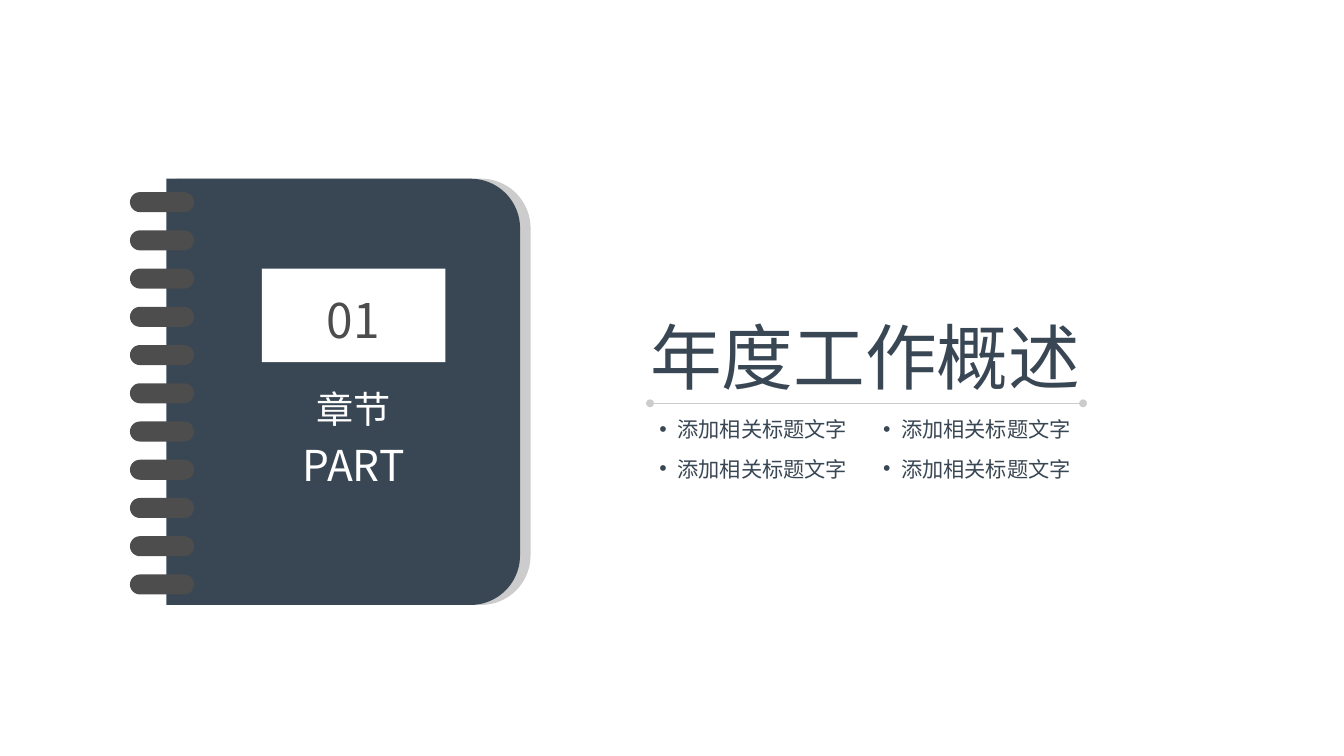
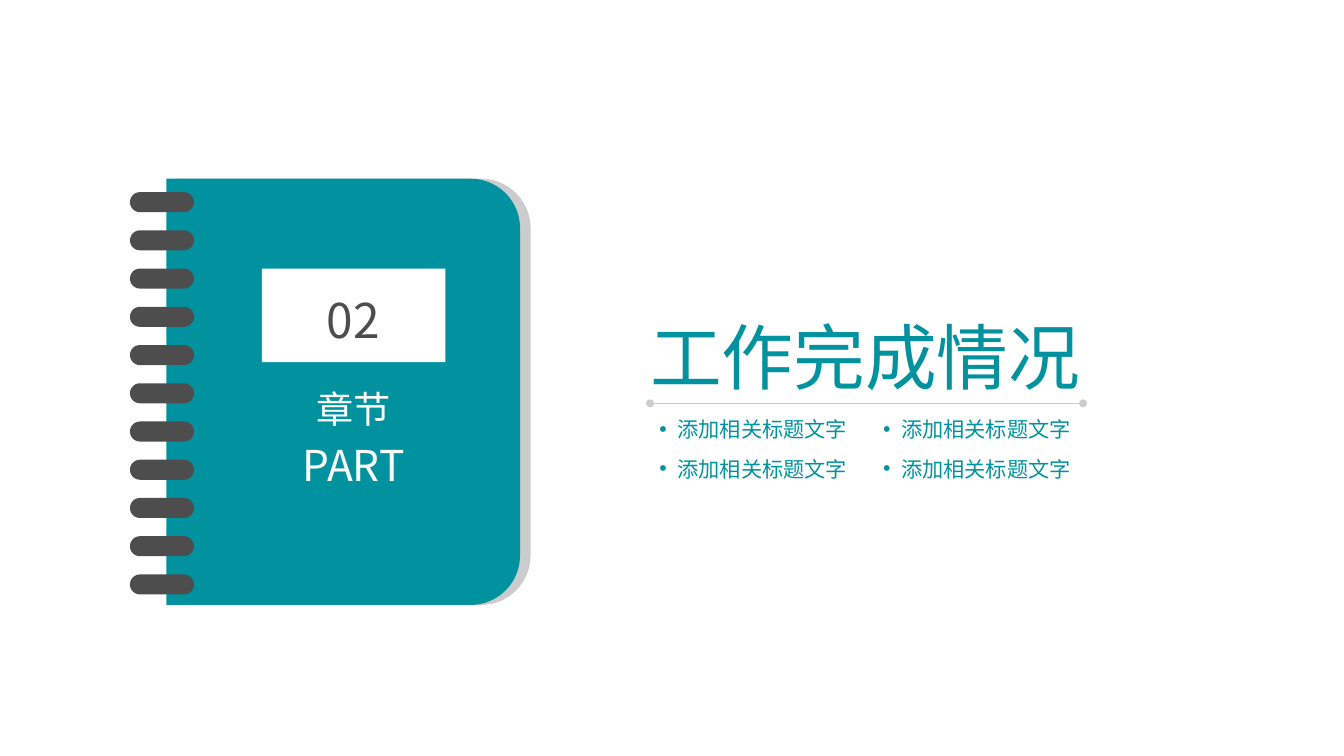
from pptx import Presentation
from pptx import util as u
from pptx.dml import color
from pptx.enum import shapes, text
from pptx.oxml import ns, xmlchemy

DARK, PALE, WHITE = "4D4D4D", "CCCCCC", "FFFFFF"
LATIN, CHINESE = "Arial", "Noto Sans CJK SC"
SHAPE = shapes.MSO_SHAPE
BULLET_TEXT = "添加相关标题文字"
CHAPTERS = [("01", "年度工作概述", "394754"), ("02", "工作完成情况", "00939F")]


def rgb(value):
    return color.RGBColor.from_string(value)


def add_xml(parent, tag, **attributes):
    element = xmlchemy.OxmlElement(tag)
    for name, value in attributes.items():
        element.set(name, str(value))
    parent.append(element)
    return element


def apply(target, values):
    for name, value in values.items():
        setattr(target, name, value)


class Deck:
    def __init__(self):
        self.presentation = Presentation()
        apply(self.presentation, {"slide_width": u.Inches(14.06), "slide_height": u.Inches(7.91)})
        self.slide = None

    def new_slide(self):
        self.slide = self.presentation.slides.add_slide(self.presentation.slide_layouts[6])

    def shape(self, parent, kind, box, fill, rotation=0, adjustments=()):
        shape = parent.shapes.add_shape(kind, *map(u.Inches, box))
        shape.shadow.inherit = False
        shape.fill.solid()
        shape.fill.fore_color.rgb = rgb(fill)
        shape.line.fill.background()
        shape.rotation = rotation
        for index, value in enumerate(adjustments):
            shape.adjustments[index] = value

    def text(self, parent, box, lines, fill, font=CHINESE, inset=0, wrap=True,
             align=None, space=None, bullet=False):
        frame = parent.shapes.add_textbox(*map(u.Inches, box)).text_frame
        apply(frame, {
            "word_wrap": wrap,
            "auto_size": text.MSO_AUTO_SIZE.SHAPE_TO_FIT_TEXT,
            "margin_left": u.Inches(inset), "margin_right": u.Inches(inset),
            "margin_top": u.Inches(inset / 2), "margin_bottom": u.Inches(inset / 2),
        })
        for index, (content, size) in enumerate(lines):
            paragraph = frame.add_paragraph() if index else frame.paragraphs[0]
            paragraph.alignment = align
            properties = paragraph._p.get_or_add_pPr()
            if space:
                add_xml(add_xml(properties, "a:spcBef"), "a:spcPct", val=space * 1000)
            if bullet:
                indent = u.Inches(0.19)
                apply(paragraph, {"level": 1})
                properties.set("marL", str(indent))
                properties.set("indent", str(-indent))
                add_xml(properties, "a:buFont", typeface=LATIN)
                add_xml(properties, "a:buChar", char="•")
            run = paragraph.add_run()
            run.text = content
            apply(run.font, {"size": u.Pt(size), "name": font})
            run.font.color.rgb = rgb(fill)
            add_xml(run._r.get_or_add_rPr(), "a:ea", typeface=CHINESE)

    def rule(self, left, right, top):
        connector = self.slide.shapes.add_connector(
            shapes.MSO_CONNECTOR.STRAIGHT, *map(u.Inches, (left, top, right, top)))
        connector.line.width = u.Pt(1)
        connector.line.color.rgb = rgb(PALE)
        line = connector._element.spPr.find(ns.qn("a:ln"))
        for end in ("a:headEnd", "a:tailEnd"):
            add_xml(line, end, type="oval")
        add_xml(connector._element.spPr, "a:effectLst")

    def cover(self, parent, left, fill):
        width, height, top = 3.7, 4.46, 1.87
        shift = (height - width) / 2
        self.shape(parent, SHAPE.ROUND_2_SAME_RECTANGLE,
                   (left - shift, top + shift, height, width), fill, 90, (0.14, 0))

    def notebook(self, number, accent):
        group = self.slide.shapes.add_group_shape()
        self.cover(group, 1.85, PALE)
        self.cover(group, 1.74, accent)
        self.shape(group, SHAPE.RECTANGLE, (2.74, 2.81, 1.92, 0.98), WHITE)
        for ring in range(11):
            self.shape(group, SHAPE.ROUNDED_RECTANGLE, (1.36, 2.01 + 0.4 * ring, 0.67, 0.21),
                       DARK, adjustments=(0.5,))
        centred = {"align": text.PP_ALIGN.CENTER, "space": 20}
        self.text(group, (2.79, 3.04, 1.81, 0.61), [(number, 36)], DARK, **centred)
        self.text(group, (2.94, 4.04, 1.52, 1.12), [("章节", 28), ("PART", 32)], WHITE, **centred)

    def chapter(self, number, title, accent):
        self.new_slide()
        self.rule(6.8, 11.33, 4.22)
        self.text(self.slide, (6.8, 3.27, 4.89, 0.91), [(title, 54)], accent, LATIN)
        for top in (4.31, 4.72):
            for left in (6.8, 9.14):
                self.text(self.slide, (left, top, 2.19, 0.37), [(BULLET_TEXT, 16)], accent,
                          LATIN, inset=0.1, wrap=False, bullet=True)
        self.notebook(number, accent)


def main():
    deck = Deck()
    for chapter in CHAPTERS:
        deck.chapter(*chapter)
    deck.presentation.save("out.pptx")


if __name__ == "__main__":
    main()
